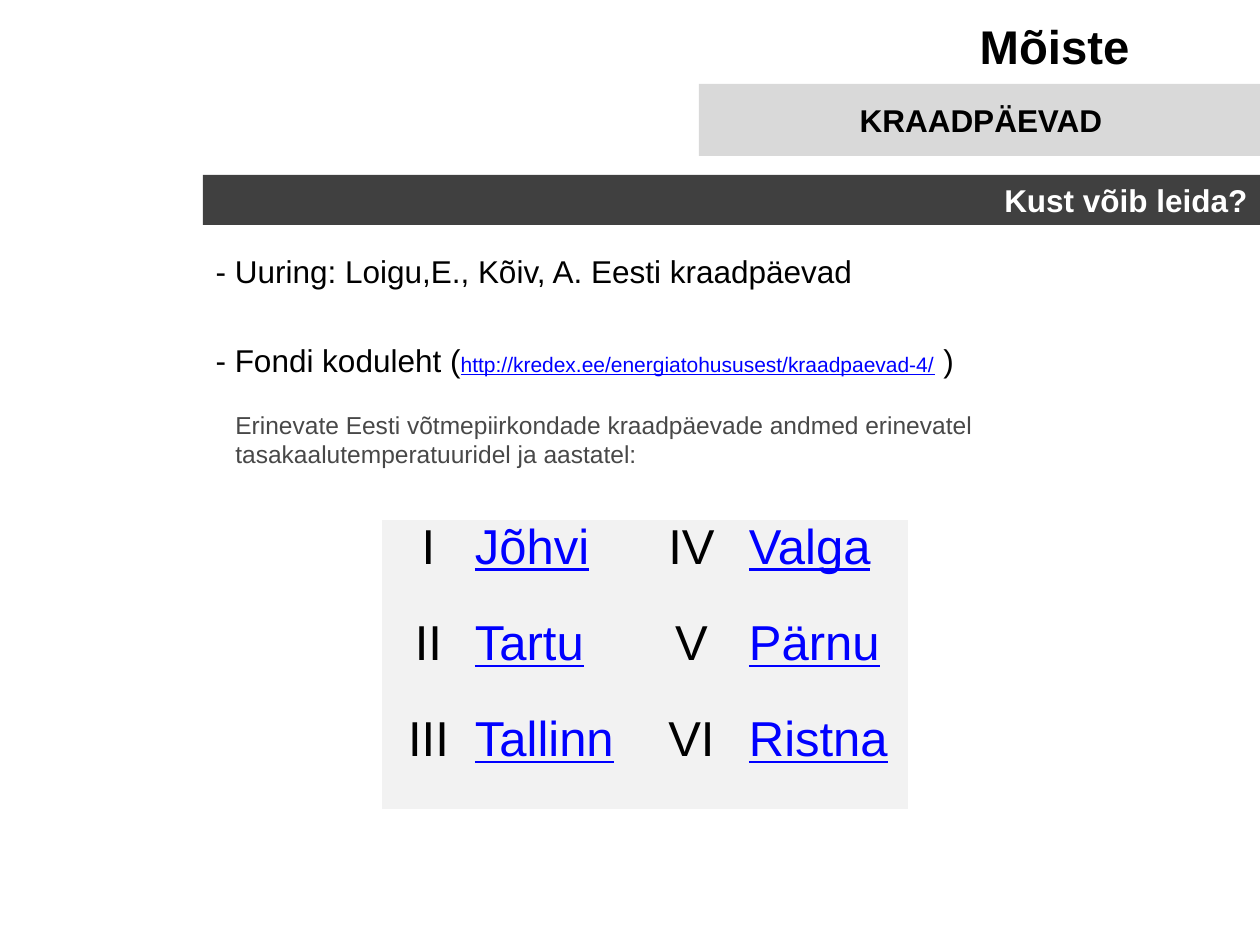
import dataclasses

import lxml.etree
import pptx
import pptx.dml.color
import pptx.enum.shapes
import pptx.enum.text
import pptx.oxml.ns
import pptx.util

ALIGN = pptx.enum.text.PP_ALIGN
ANCHOR = pptx.enum.text.MSO_ANCHOR
PLAIN_TABLE_STYLE = "{2D5ABB26-0587-4C30-8999-92F81FD0307C}"


@dataclasses.dataclass(frozen=True)
class Theme:
    font: str = "Arial"
    black: str = "000000"
    white: str = "FFFFFF"
    grey: str = "484848"
    link: str = "0000FF"
    topic_fill: str = "D9D9D9"
    banner_fill: str = "404040"
    table_fill: str = "F2F2F2"
    title_size: int = 27
    text_size: int = 18
    note_size: int = 14
    link_size: int = 12
    table_size: int = 28
    list_gap: int = 29


THEME = Theme()


def px(length):
    return pptx.util.Emu(round(length * 914400 / 126))


def color(code):
    return pptx.dml.color.RGBColor.from_string(code)


def place(shape, box):
    for name, length in zip(("left", "top", "width", "height"), box):
        setattr(shape, name, px(length))


def set_frame(frame, **values):
    values = {"word_wrap": True, "auto_size": pptx.enum.text.MSO_AUTO_SIZE.NONE} | values
    for name, value in values.items():
        setattr(frame, name, value)


def add_span(para, text, size, code=THEME.black, **values):
    span = para.add_run()
    span.text = text
    values = {"name": THEME.font, "size": pptx.util.Pt(size)} | values
    for name, value in values.items():
        setattr(span.font, name, value)
    span.font.color.rgb = color(code)


def add_title(page, box, text):
    title = page.shapes.title
    place(title, box)
    set_frame(title.text_frame, vertical_anchor=ANCHOR.MIDDLE)
    para = title.text_frame.paragraphs[0]
    para.alignment = ALIGN.RIGHT
    add_span(para, text, THEME.title_size, bold=True)


def add_band(page, box, fill, text, code, alignment):
    band = page.shapes.add_shape(
        pptx.enum.shapes.MSO_SHAPE.RECTANGLE, *map(px, box))
    band.shadow.inherit = False
    band.fill.solid()
    band.fill.fore_color.rgb = color(fill)
    band.line.fill.background()
    set_frame(band.text_frame, vertical_anchor=ANCHOR.MIDDLE)
    para = band.text_frame.paragraphs[0]
    para.alignment = alignment
    add_span(para, text, THEME.text_size, code, bold=True)


def add_sources(page, box, items):
    body = page.placeholders[1]
    place(body, box)
    frame = body.text_frame
    set_frame(frame, vertical_anchor=ANCHOR.TOP)
    for index, spans in enumerate(items):
        para = frame.add_paragraph() if index else frame.paragraphs[0]
        properties = para._p.get_or_add_pPr()
        properties.set("marL", "0")
        properties.set("indent", "0")
        lxml.etree.SubElement(properties, pptx.oxml.ns.qn("a:buNone"))
        para.space_before = pptx.util.Pt(THEME.list_gap if index else 0)
        for text, is_link in spans:
            if is_link:
                add_span(para, text, THEME.link_size, THEME.link, underline=True)
            else:
                add_span(para, text, THEME.text_size)


def add_note(page, box, text):
    note = page.shapes.add_textbox(*map(px, box))
    set_frame(note.text_frame, margin_top=px(9))
    add_span(note.text_frame.paragraphs[0], text, THEME.note_size, THEME.grey)


def add_regions(page, box, rows, widths):
    table = page.shapes.add_table(len(rows), len(widths), *map(px, box)).table
    table.first_row = table.horz_banding = False
    table._tbl.tblPr.find(pptx.oxml.ns.qn("a:tableStyleId")).text = PLAIN_TABLE_STYLE
    for column, width in zip(table.columns, widths):
        column.width = px(width)
    margins = {"margin_left": 0, "margin_top": 0, "margin_right": 0, "margin_bottom": px(5)}
    for row_index, row in enumerate(rows):
        for column_index, text in enumerate(row):
            cell = table.cell(row_index, column_index)
            for name, value in margins.items():
                setattr(cell, name, value)
            cell.fill.solid()
            cell.fill.fore_color.rgb = color(THEME.table_fill)
            para = cell.text_frame.paragraphs[0]
            if column_index % 2:
                add_span(para, text, THEME.table_size, THEME.link, underline=True)
            else:
                para.alignment = ALIGN.CENTER
                add_span(para, text, THEME.table_size)


def main():
    deck = pptx.Presentation()
    deck.slide_width, deck.slide_height = px(1260), px(945)
    page = deck.slides.add_slide(deck.slide_layouts[1])
    add_title(page, (202, 0, 940, 91), "Mõiste")
    add_band(page, (699, 84, 564, 72), THEME.topic_fill,
             "KRAADPÄEVAD", THEME.black, ALIGN.CENTER)
    add_band(page, (203, 175, 1057, 50), THEME.banner_fill,
             "Kust võib leida?", THEME.white, ALIGN.RIGHT)
    add_sources(page, (203, 246, 880, 137), [
        [("- Uuring: Loigu,E., Kõiv, A. Eesti kraadpäevad", False)],
        [("- Fondi koduleht (", False),
         ("http://kredex.ee/energiatohususest/kraadpaevad-4/", True),
         (" )", False)],
    ])
    add_note(page, (223, 401, 907, 102),
             "Erinevate Eesti võtmepiirkondade kraadpäevade andmed erinevatel "
             "tasakaalutemperatuuridel ja aastatel:")
    add_regions(page, (382, 520, 526, 289), [
        ("I", "Jõhvi", "IV", "Valga"),
        ("II", "Tartu", "V", "Pärnu"),
        ("III", "Tallinn", "VI", "Ristna"),
    ], (93, 159, 115, 159))
    deck.save("out.pptx")


if __name__ == "__main__":
    main()
